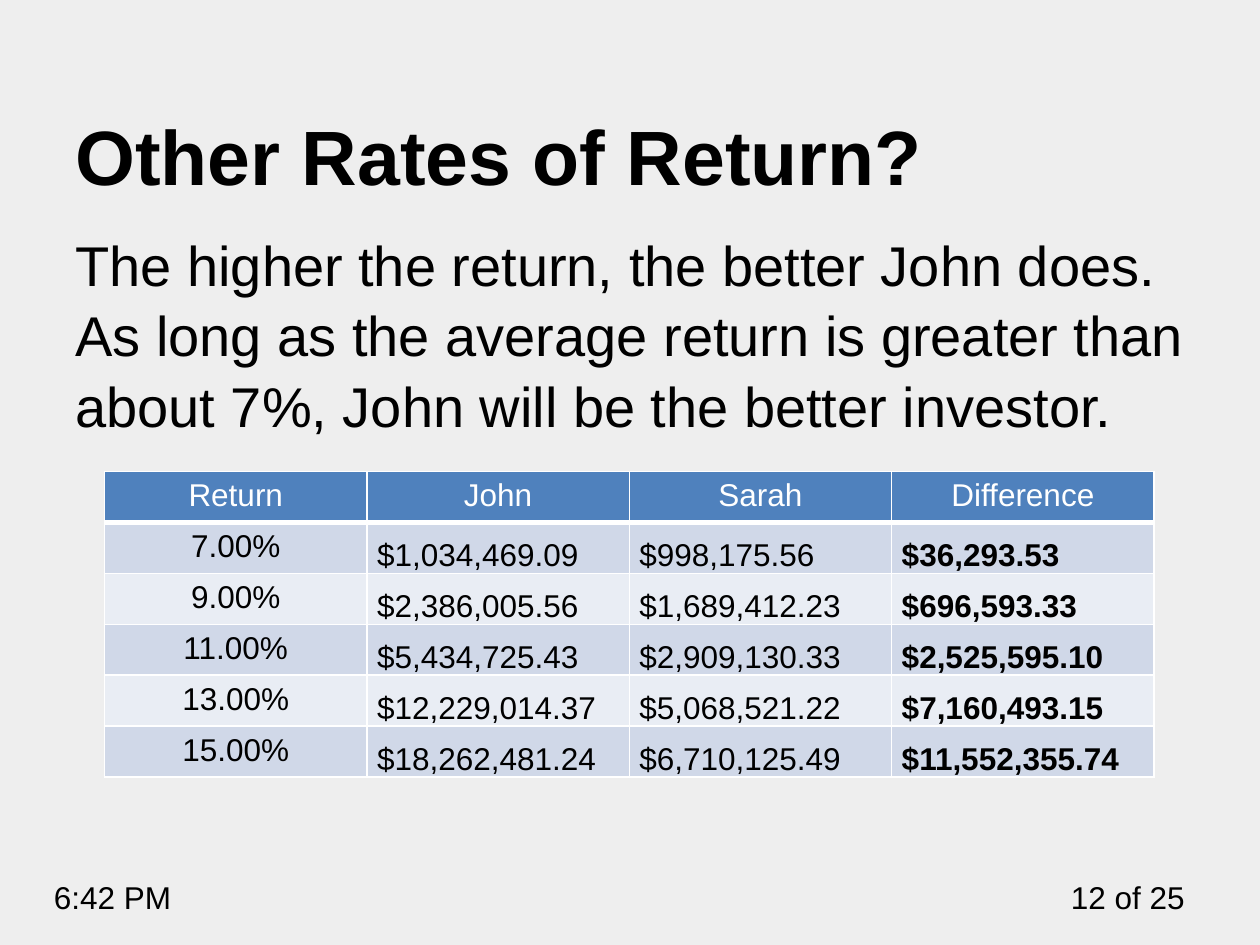
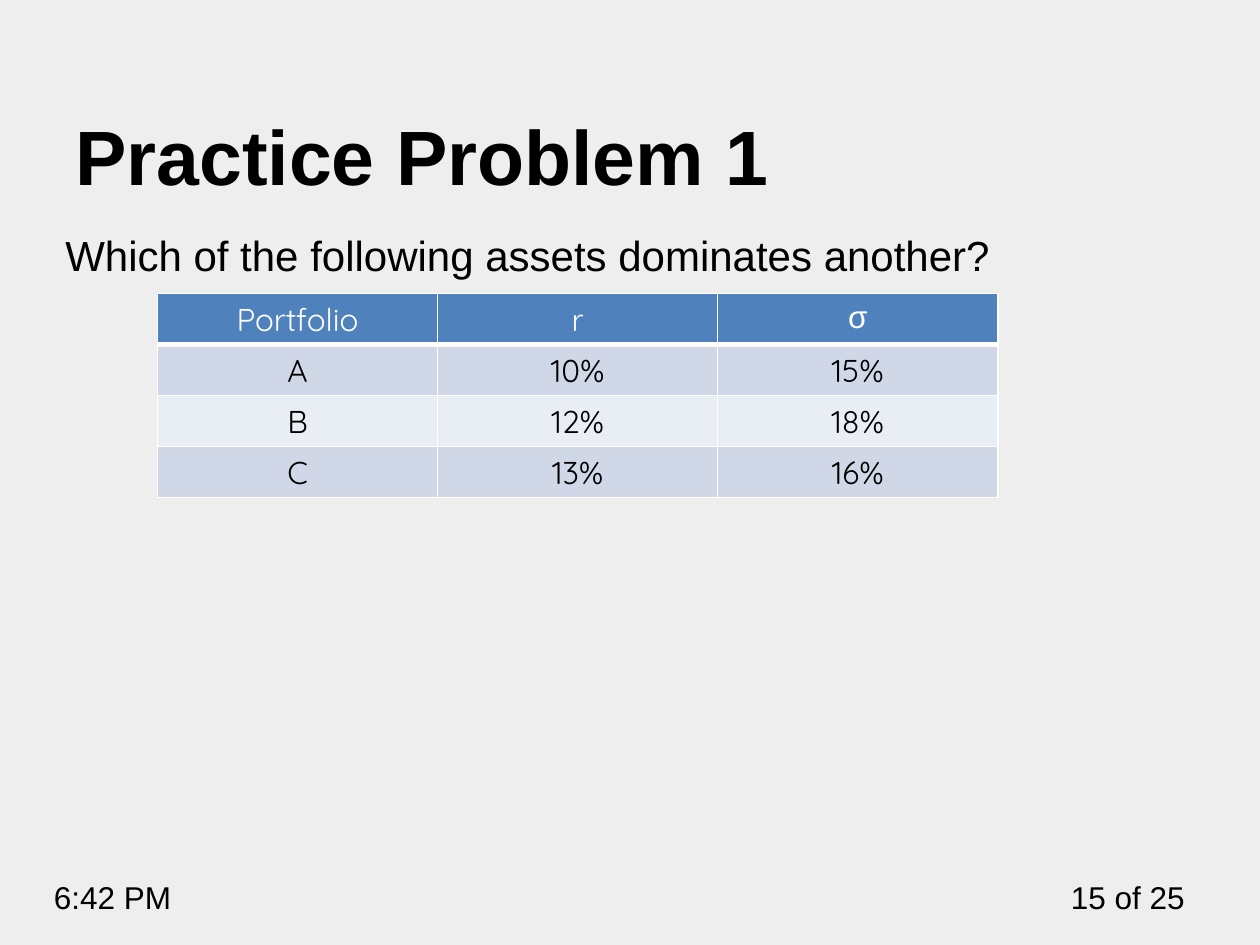
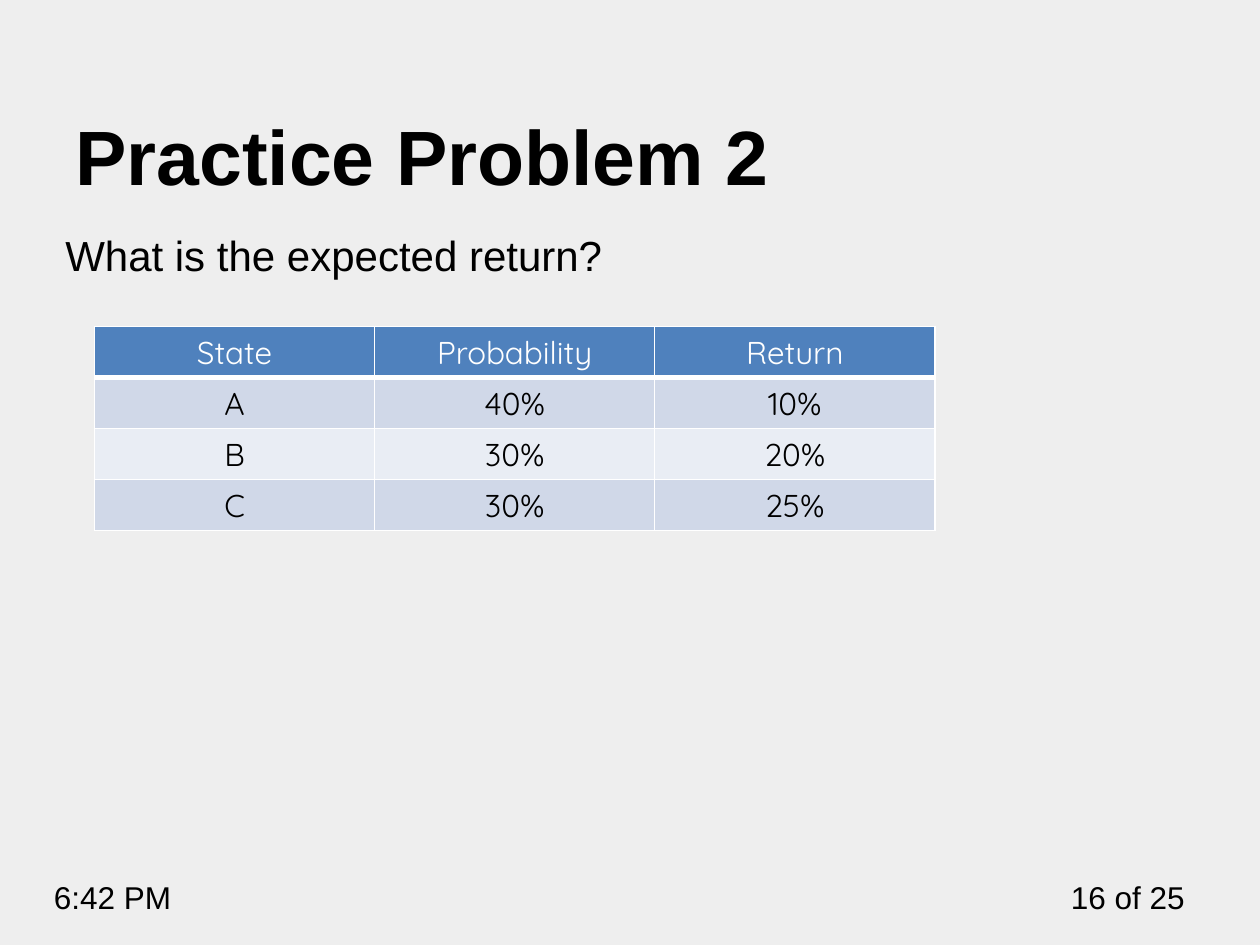
from lxml import etree
from pptx import Presentation
from pptx.dml.color import RGBColor
from pptx.enum.text import MSO_ANCHOR, PP_ALIGN
from pptx.oxml.ns import qn
from pptx.util import Inches, Pt

LEFT, CENTER, RIGHT = PP_ALIGN.LEFT, PP_ALIGN.CENTER, PP_ALIGN.RIGHT
TOP, BOTTOM = MSO_ANCHOR.TOP, MSO_ANCHOR.BOTTOM

BACKGROUND = RGBColor(0xEE, 0xEE, 0xEE)
BLACK = RGBColor(0x00, 0x00, 0x00)
WHITE = RGBColor(0xFF, 0xFF, 0xFF)
HEADER_BLUE = RGBColor(0x4F, 0x81, 0xBD)
ROW_BANDS = (RGBColor(0xD0, 0xD8, 0xE8), RGBColor(0xE9, 0xED, 0xF4))

BODY_FONT = "Arial"
PROBLEM_FONT = "Quicksand"
CLOCK = "6:42 PM"
SLIDE_TOTAL = 25

RETURNS = [
    ("Return", "John", "Sarah", "Difference"),
    ("7.00%", "$1,034,469.09", "$998,175.56", "$36,293.53"),
    ("9.00%", "$2,386,005.56", "$1,689,412.23", "$696,593.33"),
    ("11.00%", "$5,434,725.43", "$2,909,130.33", "$2,525,595.10"),
    ("13.00%", "$12,229,014.37", "$5,068,521.22", "$7,160,493.15"),
    ("15.00%", "$18,262,481.24", "$6,710,125.49", "$11,552,355.74"),
]
PORTFOLIOS = [
    ("Portfolio", "r", "σ"),
    ("A", "10%", "15%"),
    ("B", "12%", "18%"),
    ("C", "13%", "16%"),
]
STATES = [
    ("State", "Probability", "Return"),
    ("A", "40%", "10%"),
    ("B", "30%", "20%"),
    ("C", "30%", "25%"),
]


def style_paragraph(paragraph, size, color=BLACK, bold=False, align=LEFT, font=BODY_FONT):
    """Set the font and alignment of a paragraph."""
    paragraph.alignment = align
    paragraph.font.name = font
    paragraph.font.size = Pt(size)
    paragraph.font.bold = bold
    paragraph.font.color.rgb = color


def add_text(slide, text, box, size, bold=False, align=LEFT, anchor=TOP, spacing=1.0):
    """Add a wrapped text box; box is left, top, width and height in inches."""
    frame = slide.shapes.add_textbox(*map(Inches, box)).text_frame
    frame.word_wrap = True
    frame.vertical_anchor = anchor
    paragraph = frame.paragraphs[0]
    paragraph.text = text
    paragraph.line_spacing = spacing
    style_paragraph(paragraph, size, bold=bold, align=align)


def add_borders(cell, bottom_width):
    """Draw white lines around a cell."""
    properties = cell._tc.get_or_add_tcPr()
    for side, width in (("L", 1), ("R", 1), ("T", 1), ("B", bottom_width)):
        line = etree.SubElement(properties, qn(f"a:ln{side}"), w=str(Pt(width)))
        fill = etree.SubElement(line, qn("a:solidFill"))
        etree.SubElement(fill, qn("a:srgbClr"), val=str(WHITE))


def add_banded_table(slide, rows, box, font):
    """Add a table with a blue header and banded rows."""
    table = slide.shapes.add_table(len(rows), len(rows[0]), *map(Inches, box)).table
    for row_index, row in enumerate(rows):
        is_header = row_index == 0
        for column_index, value in enumerate(row):
            cell = table.cell(row_index, column_index)
            cell.text = value
            add_borders(cell, 3 if is_header else 1)
            cell.fill.solid()
            cell.fill.fore_color.rgb = HEADER_BLUE if is_header else ROW_BANDS[(row_index - 1) % 2]
            style_paragraph(
                cell.text_frame.paragraphs[0], 18,
                color=WHITE if is_header else BLACK,
                align=CENTER,
                font=BODY_FONT if value == "σ" else font,
            )
    return table


def align_amounts(table):
    """Set the dollar amounts low and left, with the differences in bold."""
    last_column = len(table.columns) - 1
    for row_index in range(1, len(table.rows)):
        for column_index in range(1, last_column + 1):
            cell = table.cell(row_index, column_index)
            cell.vertical_anchor = BOTTOM
            cell.margin_left = Inches(0.08)
            cell.margin_right = cell.margin_top = Inches(0.01)
            cell.margin_bottom = 0
            amount = cell.text_frame.paragraphs[0]
            amount.alignment = LEFT
            amount.font.bold = column_index == last_column


def add_lesson_slide(presentation, number, title, body, body_left, body_width, body_size):
    """Add a slide with its footer, body text and title."""
    slide = presentation.slides.add_slide(presentation.slide_layouts[6])
    add_text(slide, f"{number} of {SLIDE_TOTAL}", (8.33, 6.92, 1.17, 0.4), 18, align=RIGHT)
    add_text(slide, CLOCK, (0.33, 6.92, 1.58, 0.4), 18)
    add_text(slide, body, (body_left, 1.75, body_width, 4.95), body_size, spacing=1.05)
    add_text(slide, title, (0.5, 0.39, 9, 1.25), 44, bold=True, anchor=BOTTOM)
    return slide


def main():
    """Build the three slides and save them."""
    presentation = Presentation()
    presentation.slide_width = Inches(10)
    presentation.slide_height = Inches(7.5)
    background = presentation.slide_master.background.fill
    background.solid()
    background.fore_color.rgb = BACKGROUND

    rates = add_lesson_slide(
        presentation, 12, "Other Rates of Return?",
        "The higher the return, the better John does. As long as the average return "
        "is greater than about 7%, John will be the better investor.",
        0.5, 9.33, 32,
    )
    align_amounts(add_banded_table(rates, RETURNS, (0.83, 3.74, 8.33, 2.43), BODY_FONT))

    problems = [
        (15, "Which of the following assets dominates another?", PORTFOLIOS, 1.25, 2.33),
        (16, "What is the expected return?", STATES, 0.75, 2.59),
    ]
    for problem, (number, question, rows, left, top) in enumerate(problems, start=1):
        slide = add_lesson_slide(
            presentation, number, f"Practice Problem {problem}", question, 0.42, 9.17, 24
        )
        add_banded_table(slide, rows, (left, top, 6.67, 1.62), PROBLEM_FONT)

    presentation.save("out.pptx")


if __name__ == "__main__":
    main()
